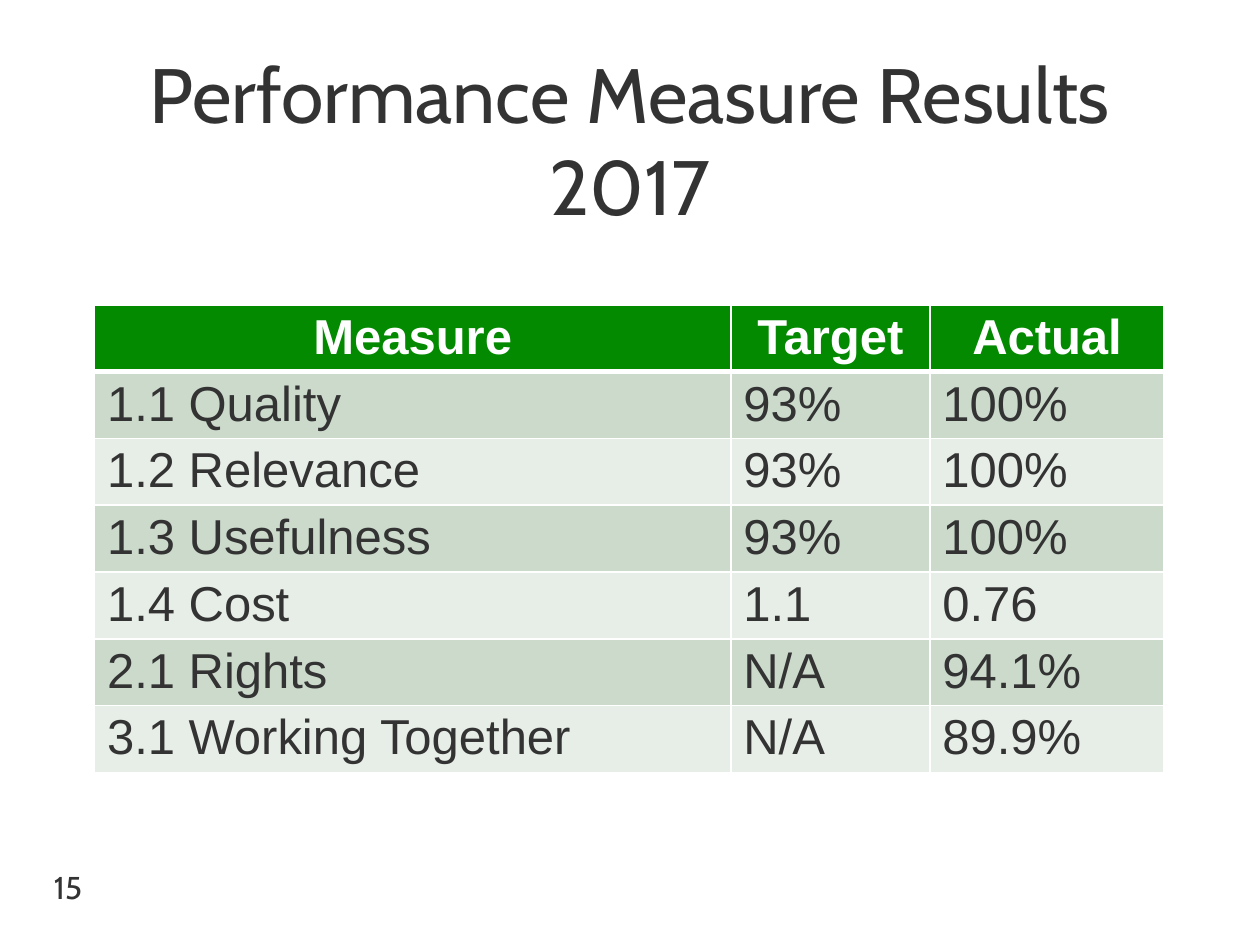
from lxml.etree import SubElement
from pptx import Presentation
from pptx.dml.color import RGBColor
from pptx.enum.text import MSO_ANCHOR as Anchor, MSO_AUTO_SIZE as AutoSize, PP_ALIGN as Align
from pptx.oxml.ns import qn
from pptx.util import Inches, Pt

COLORS = {
    "text": "333333",
    "white": "FFFFFF",
    "header": "038A00",
    "odd": "CCDACC",
    "even": "E7EDE7",
}
COLUMN_WIDTHS = [5.05, 1.58, 1.86]
ROW_HEIGHT = 0.53
ROWS = [
    ("Measure", "Target", "Actual"),
    ("1.1 Quality", "93%", "100%"),
    ("1.2 Relevance", "93%", "100%"),
    ("1.3 Usefulness", "93%", "100%"),
    ("1.4 Cost", "1.1", "0.76"),
    ("2.1 Rights", "N/A", "94.1%"),
    ("3.1 Working Together", "N/A", "89.9%"),
]


def rgb(name):
    return RGBColor.from_string(COLORS[name])


def write(frame, text, font="Arial", size=28, color="text", bold=False, align=Align.LEFT):
    para = frame.paragraphs[0]
    para.alignment = align
    span = para.add_run()
    span.text = text
    span.font.name = font
    span.font.size = Pt(size)
    span.font.bold = bold
    span.font.color.rgb = rgb(color)


def set_borders(cell, bottom):
    properties = cell._tc.get_or_add_tcPr()
    widths = {"a:lnL": 1, "a:lnR": 1, "a:lnT": 1, "a:lnB": bottom}
    for index, (tag, width) in enumerate(widths.items()):
        line = SubElement(properties, qn(tag), w=str(Pt(width)))
        fill = SubElement(line, qn("a:solidFill"))
        SubElement(fill, qn("a:srgbClr"), val=COLORS["white"])
        properties.remove(line)
        properties.insert(index, line)


class ResultsPage:
    heading_font = "Cabin"

    def __init__(self, deck):
        self.deck = deck
        self.page = deck.slides.add_slide(deck.slide_layouts[5])
        background = self.page.background.fill
        background.solid()
        background.fore_color.rgb = rgb("white")

    def area(self, left, top, width, height):
        across, down = self.deck.slide_width, self.deck.slide_height
        return int(left * across), int(top * down), int(width * across), int(height * down)

    def title(self, text, *shares):
        box = self.page.shapes.title
        box.left, box.top, box.width, box.height = self.area(*shares)
        frame = box.text_frame
        frame.word_wrap = True
        frame.auto_size = AutoSize.NONE
        frame.vertical_anchor = Anchor.TOP
        frame.margin_top = Inches(0.07)
        write(frame, text, font=self.heading_font, size=44, align=Align.CENTER)

    def label(self, text, *shares):
        box = self.page.shapes.add_textbox(*self.area(*shares))
        box.text_frame.word_wrap = True
        write(box.text_frame, text, font=self.heading_font, size=18)

    def table(self, rows, *shares):
        table = self.page.shapes.add_table(len(rows), len(rows[0]), *self.area(*shares)).table
        for column, width in zip(table.columns, COLUMN_WIDTHS):
            column.width = Inches(width)
        for number, values in enumerate(rows):
            table.rows[number].height = Inches(ROW_HEIGHT)
            for column, value in enumerate(values):
                self.cell(table.cell(number, column), value, number)

    def cell(self, cell, value, number):
        header = number == 0
        cell.margin_left = cell.margin_right = Inches(0.1)
        cell.margin_top = cell.margin_bottom = Inches(0.04)
        cell.fill.solid()
        cell.fill.fore_color.rgb = rgb("header" if header else "odd" if number % 2 else "even")
        set_borders(cell, 3 if number == 0 else 1)
        write(
            cell.text_frame,
            value,
            color="white" if header else "text",
            bold=header,
            align=Align.CENTER if header else Align.LEFT,
        )


def main():
    deck = Presentation()
    deck.slide_width, deck.slide_height = Inches(10), Inches(7.5)
    results = ResultsPage(deck)
    results.title("Performance Measure Results 2017", 0.05, 0.04, 0.9, 0.17)
    results.table(ROWS, 0.075, 2.42 / 7.5, 0.85, len(ROWS) * ROW_HEIGHT / 7.5)
    results.label("15", 0.033, 6.84 / 7.5, 0.233, 0.4 / 7.5)
    deck.save("out.pptx")


if __name__ == "__main__":
    main()
